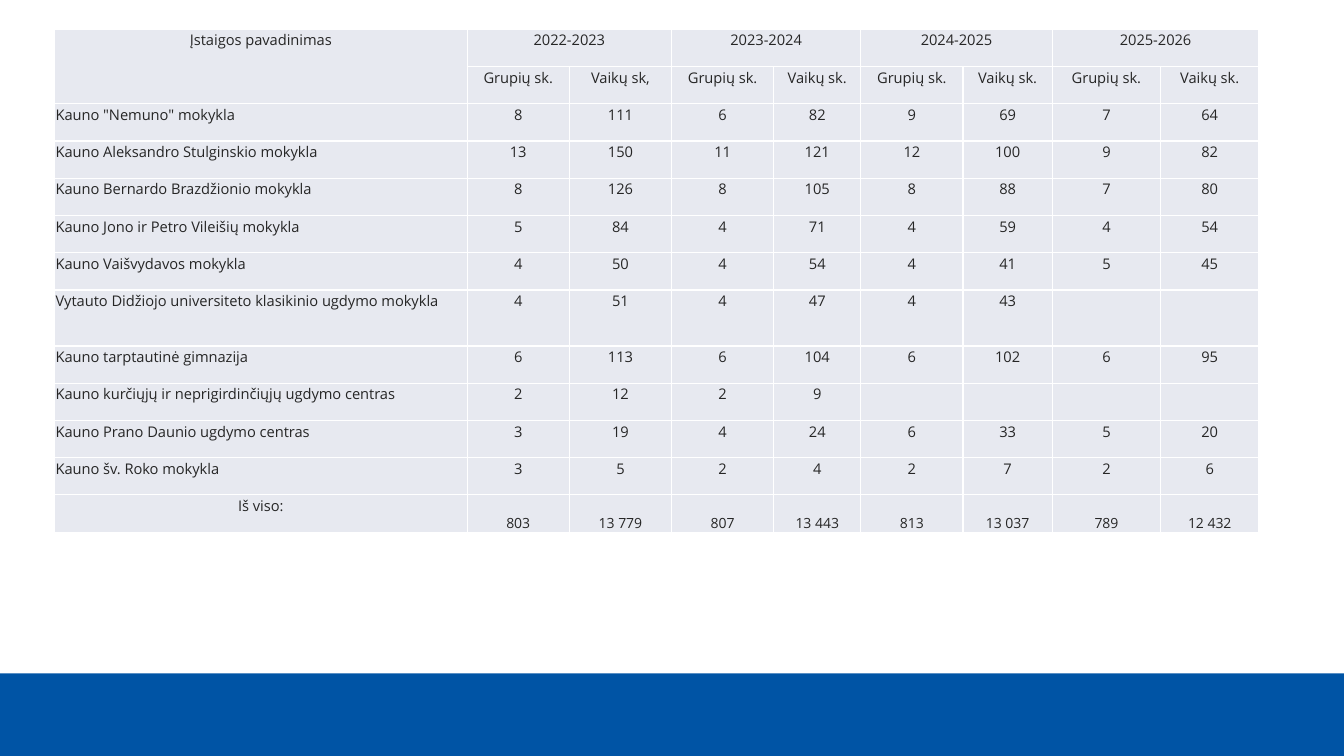
"""Builds a slide with a table of preschool groups and children by school year."""
from itertools import product

from lxml.etree import SubElement
from pptx import Presentation
from pptx.dml.color import RGBColor
from pptx.enum.shapes import MSO_SHAPE
from pptx.enum.text import MSO_ANCHOR, PP_ALIGN
from pptx.oxml.ns import qn
from pptx.util import Pt

THEME = {
    "font": "Open Sans",
    "body_size": 10.5,
    "total_size": 10,
    "text": "262626",
    "cell": "E7E9F0",
    "border": "FFFFFF",
    "band": "0054A5",
}
NAME_HEADING = "Įstaigos pavadinimas"
YEARS = ["2022-2023", "2023-2024", "2024-2025", "2025-2026"]
SUBHEADINGS = ["Grupių sk.", "Vaikų sk,"] + ["Grupių sk.", "Vaikų sk."] * 3
SCHOOLS = [
    ('Kauno "Nemuno" mokykla', 8, 111, 6, 82, 9, 69, 7, 64),
    ("Kauno Aleksandro Stulginskio mokykla", 13, 150, 11, 121, 12, 100, 9, 82),
    ("Kauno Bernardo Brazdžionio mokykla", 8, 126, 8, 105, 8, 88, 7, 80),
    ("Kauno Jono ir Petro Vileišių mokykla", 5, 84, 4, 71, 4, 59, 4, 54),
    ("Kauno Vaišvydavos mokykla", 4, 50, 4, 54, 4, 41, 5, 45),
    ("Vytauto Didžiojo universiteto klasikinio ugdymo mokykla", 4, 51, 4, 47, 4, 43, "", ""),
    ("Kauno tarptautinė gimnazija", 6, 113, 6, 104, 6, 102, 6, 95),
    ("Kauno kurčiųjų ir neprigirdinčiųjų ugdymo centras", 2, 12, 2, 9, "", "", "", ""),
    ("Kauno Prano Daunio ugdymo centras", 3, 19, 4, 24, 6, 33, 5, 20),
    ("Kauno šv. Roko mokykla", 3, 5, 2, 4, 2, 7, 2, 6),
]
TOTALS = ("Iš viso:", "803", "13 779", "807", "13 443", "813", "13 037", "789", "12 432")

SLIDE_WIDTH, SLIDE_HEIGHT, BAND_HEIGHT = 960, 540, 59
TABLE_LEFT, TABLE_TOP = 39, 21
COLUMN_WIDTHS = [294.7, 73, 73, 73, 62.2, 73, 63.8, 77.4, 70.2]
ROW_HEIGHT, TALL_ROW_HEIGHT, TALL_ROW = 26.6, 40, 7


def add_borders(cell):
    properties = cell._tc.get_or_add_tcPr()
    for side in ("a:lnL", "a:lnR", "a:lnT", "a:lnB"):
        line = SubElement(properties, qn(side), w=str(Pt(1)))
        SubElement(SubElement(line, qn("a:solidFill")), qn("a:srgbClr"), val=THEME["border"])


def fill_cell(cell, content, alignment, size, anchor):
    cell.text = str(content)
    cell.margin_left = cell.margin_right = cell.margin_top = Pt(0.7)
    cell.margin_bottom = Pt(0)
    cell.vertical_anchor = anchor
    add_borders(cell)
    cell.fill.solid()
    cell.fill.fore_color.rgb = RGBColor.from_string(THEME["cell"])
    paragraph = cell.text_frame.paragraphs[0]
    paragraph.alignment = alignment
    paragraph.font.name = THEME["font"]
    paragraph.font.size = Pt(size)
    paragraph.font.color.rgb = RGBColor.from_string(THEME["text"])


def add_band(slide):
    band = slide.shapes.add_shape(
        MSO_SHAPE.RECTANGLE, Pt(0), Pt(SLIDE_HEIGHT - BAND_HEIGHT), Pt(SLIDE_WIDTH), Pt(BAND_HEIGHT)
    )
    band.shadow.inherit = False
    band.fill.solid()
    band.fill.fore_color.rgb = RGBColor.from_string(THEME["band"])
    band.line.fill.background()


def add_enrolment(slide):
    year_row = [NAME_HEADING]
    for year in YEARS:
        year_row += [year, ""]
    rows = [year_row, [""] + SUBHEADINGS, *SCHOOLS, TOTALS]
    heights = [TALL_ROW_HEIGHT if row == TALL_ROW else ROW_HEIGHT for row in range(len(rows))]
    enrolment = slide.shapes.add_table(
        len(rows), len(COLUMN_WIDTHS), Pt(TABLE_LEFT), Pt(TABLE_TOP),
        Pt(sum(COLUMN_WIDTHS)), Pt(sum(heights)),
    ).table
    enrolment.first_row = enrolment.horz_banding = False
    for column, width in zip(enrolment.columns, COLUMN_WIDTHS):
        column.width = Pt(width)
    for row, height in zip(enrolment.rows, heights):
        row.height = Pt(height)

    total_row = len(rows) - 1
    for row, column in product(range(len(rows)), range(len(COLUMN_WIDTHS))):
        is_school = column == 0 and 2 <= row < total_row
        is_total = column > 0 and row == total_row
        fill_cell(
            enrolment.cell(row, column),
            rows[row][column],
            PP_ALIGN.LEFT if is_school else PP_ALIGN.CENTER,
            THEME["total_size"] if is_total else THEME["body_size"],
            MSO_ANCHOR.BOTTOM if is_total else MSO_ANCHOR.TOP,
        )
    enrolment.cell(0, 0).merge(enrolment.cell(1, 0))
    for column in range(1, len(COLUMN_WIDTHS), 2):
        enrolment.cell(0, column).merge(enrolment.cell(0, column + 1))


def main():
    presentation = Presentation()
    presentation.slide_width, presentation.slide_height = Pt(SLIDE_WIDTH), Pt(SLIDE_HEIGHT)
    slide = presentation.slides.add_slide(presentation.slide_layouts[6])
    add_band(slide)
    add_enrolment(slide)
    presentation.save("out.pptx")


if __name__ == "__main__":
    main()
